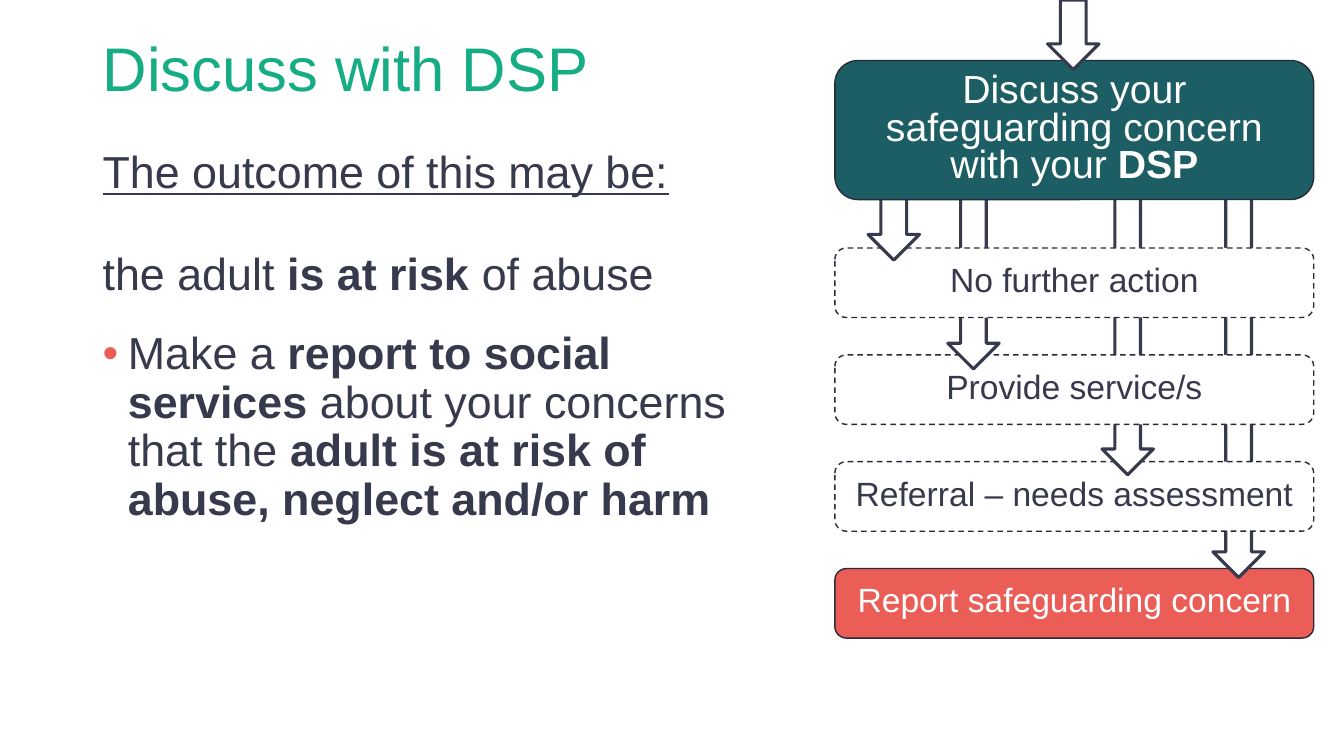
from lxml import etree
from pptx import Presentation
from pptx.dml.color import RGBColor
from pptx.enum import dml, shapes, text
from pptx.oxml import ns
from pptx.util import Inches, Pt

COLOURS = {
    "title": "16AD85", "ink": "37394C", "outline": "292A38",
    "coral": "EB5E57", "teal": "1C5E64", "white": "FFFFFF",
}
FONT = "Arial"

# Each run is (text, bold)
TITLE = [("Discuss with DSP", False)]
OUTCOME = [("The outcome of this may be:", False)]
RISK = [("the adult ", False), ("is at risk ", True), ("of abuse", False)]
ACTION = [
    ("Make a ", False), ("report to social services ", True),
    ("about your concerns that the ", False),
    ("adult is at risk of abuse, neglect and/or harm", True),
]
DISCUSS = [("Discuss your safeguarding concern with your ", False), ("DSP", True)]

# Label, fill, text colour, dashed outline, then arrow left, top and tip
STEPS = [
    ("No further action", "white", "ink", True, (8.61, 1.89, 2.58)),
    ("Provide service/s", "white", "ink", True, (9.4, 1.84, 3.66)),
    ("Referral – needs assessment", "white", "ink", True, (10.93, 1.53, 4.71)),
    ("Report safeguarding concern", "coral", "white", False, (12.03, 1.23, 5.73)),
]
ENTRY_ARROW = (10.39, 0, 0.69)

BOX_LEFT, BOX_WIDTH = 8.28, 4.75
STEP_TOP, STEP_PITCH, STEP_HEIGHT = 2.46, 1.06, 0.69
ARROW_WIDTH = 0.51
TEXT_LEFT = 0.92


def colour(name):
    return RGBColor.from_string(COLOURS[name])


def add_runs(paragraph, runs, size, colour_name, spacing, underline=False):
    paragraph.line_spacing = spacing
    for words, bold in runs:
        run = paragraph.add_run()
        run.text = words
        font = run.font
        font.name, font.size, font.bold = FONT, Pt(size), bold
        font.color.rgb = colour(colour_name)
        if underline:
            font.underline = True


def add_text_frame(slide, top, width, height, anchor=text.MSO_ANCHOR.TOP):
    box = slide.shapes.add_textbox(
        Inches(TEXT_LEFT), Inches(top), Inches(width), Inches(height))
    frame = box.text_frame
    frame.word_wrap = True
    frame.vertical_anchor = anchor
    return frame


def add_bullet(paragraph, indent):
    properties = paragraph._p.get_or_add_pPr()
    properties.set("marL", str(Inches(indent)))
    properties.set("indent", str(-Inches(indent)))
    bullet_colour = etree.SubElement(properties, ns.qn("a:buClr"))
    etree.SubElement(bullet_colour, ns.qn("a:srgbClr"), val=COLOURS["coral"])
    etree.SubElement(properties, ns.qn("a:buFont"), typeface=FONT)
    etree.SubElement(properties, ns.qn("a:buChar"), char="•")


def add_outlined_shape(slide, kind, bounds, fill, line, line_width):
    shape = slide.shapes.add_shape(kind, *(Inches(value) for value in bounds))
    shape.shadow.inherit = False
    shape.fill.solid()
    shape.fill.fore_color.rgb = colour(fill)
    shape.line.color.rgb = colour(line)
    shape.line.width = Pt(line_width)
    return shape


def add_box(slide, top, height, runs, size, fill, text_colour, dashed=False):
    box = add_outlined_shape(
        slide, shapes.MSO_SHAPE.ROUNDED_RECTANGLE,
        (BOX_LEFT, top, BOX_WIDTH, height), fill, "outline", 1)
    if dashed:
        box.line.dash_style = dml.MSO_LINE.DASH
    frame = box.text_frame
    frame.word_wrap = True
    frame.vertical_anchor = text.MSO_ANCHOR.MIDDLE
    paragraph = frame.paragraphs[0]
    paragraph.alignment = text.PP_ALIGN.CENTER
    add_runs(paragraph, runs, size, text_colour, 0.8)


def add_arrow(slide, left, top, tip):
    add_outlined_shape(slide, shapes.MSO_SHAPE.DOWN_ARROW,
                       (left, top, ARROW_WIDTH, tip - top), "white", "ink", 2.25)


def add_flow(slide):
    """Draw from the bottom up, so each box hides the tails of later arrows."""
    for row, step in reversed(list(enumerate(STEPS))):
        label, fill, text_colour, dashed, arrow = step
        add_box(slide, STEP_TOP + row * STEP_PITCH, STEP_HEIGHT,
                [(label, False)], 24, fill, text_colour, dashed)
        add_arrow(slide, *arrow)
    add_box(slide, 0.6, 1.38, DISCUSS, 28, "teal", "white")
    add_arrow(slide, *ENTRY_ARROW)


def add_copy(slide):
    title = add_text_frame(slide, 0.4, 7.06, 0.61, text.MSO_ANCHOR.MIDDLE)
    add_runs(title.paragraphs[0], TITLE, 44, "title", 0.9)

    outcome = add_text_frame(slide, 1.44, 6.86, 0.56)
    add_runs(outcome.paragraphs[0], OUTCOME, 32, "ink", 0.9, underline=True)

    body = add_text_frame(slide, 2.45, 6.86, 4.15)
    risk = body.paragraphs[0]
    risk.space_after = Pt(12)
    add_runs(risk, RISK, 32, "ink", 0.9)
    action = body.add_paragraph()
    add_bullet(action, 0.25)
    action.space_before, action.space_after = Pt(10), Pt(12)
    add_runs(action, ACTION, 32, "ink", 0.9)


def main():
    presentation = Presentation()
    presentation.slide_width = Inches(13.33)
    presentation.slide_height = Inches(7.5)
    slide = presentation.slides.add_slide(presentation.slide_layouts[6])
    add_copy(slide)
    add_flow(slide)
    presentation.save("out.pptx")


if __name__ == "__main__":
    main()
